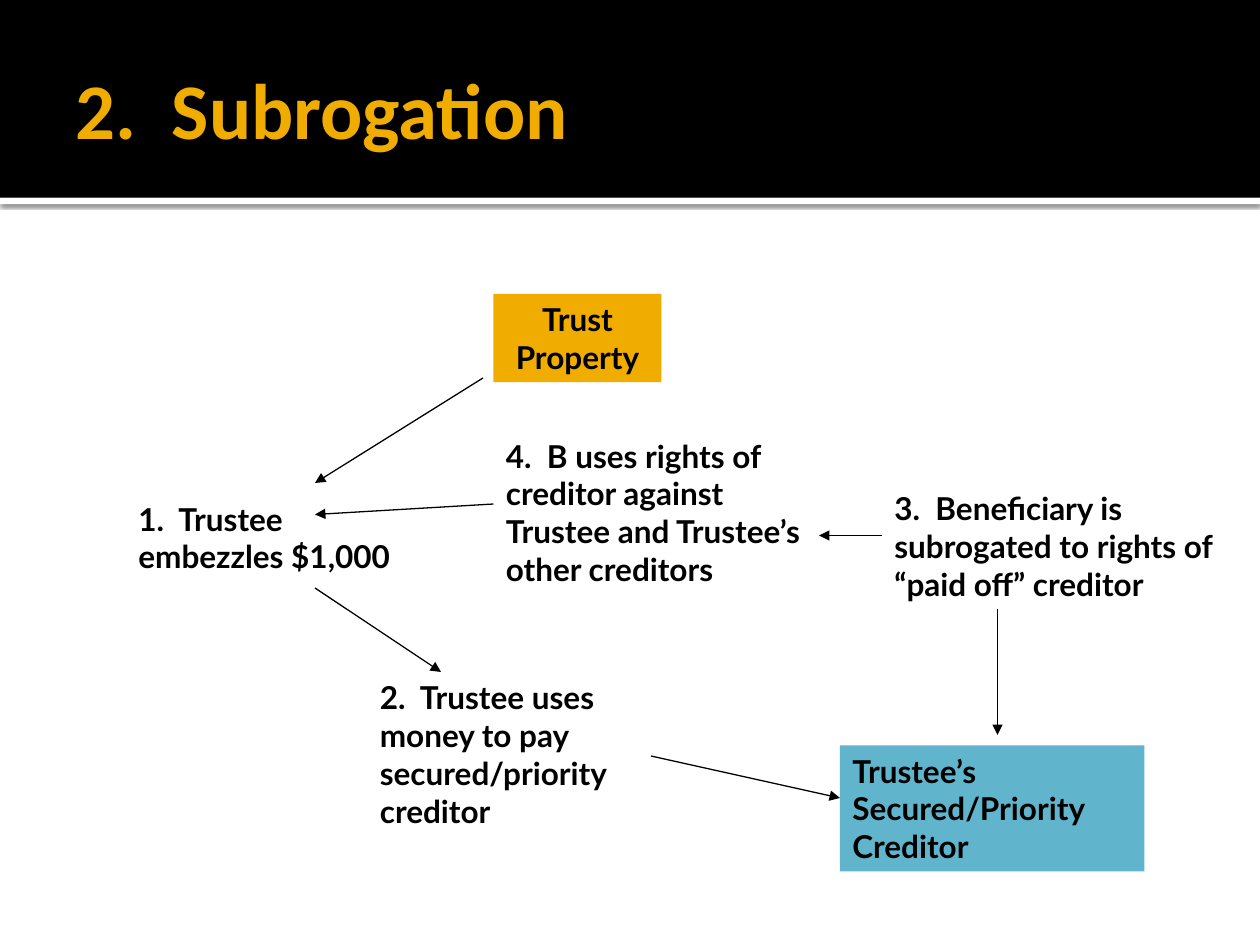
from pptx import Presentation
from pptx.dml.color import RGBColor
from pptx.enum.shapes import MSO_CONNECTOR, MSO_SHAPE
from pptx.enum.text import MSO_ANCHOR, MSO_AUTO_SIZE, PP_ALIGN
from pptx.oxml import parse_xml
from pptx.oxml.ns import nsdecls
from pptx.util import Inches, Pt

BLACK, WHITE, GOLD, BLUE = "000000", "FFFFFF", "F0AD00", "60B5CC"
TITLE = "2.  Subrogation"

# The diagram sits on a grid of 12 units to the inch
UNIT = Inches(1) / 12

# Text, left, top, width, height, fill, alignment
STEPS = [
    ("Trust Property", 47, 28, 16, 8.4, GOLD, PP_ALIGN.CENTER),
    ("1.  Trustee\vembezzles $1,000", 12, 47, 35, 8.4, None, PP_ALIGN.LEFT),
    ("2.  Trustee uses money to pay secured/priority creditor",
     35, 64, 29, 15.6, None, PP_ALIGN.LEFT),
    ("Trustee’s Secured/Priority Creditor",
     80, 71, 29, 12, BLUE, PP_ALIGN.LEFT),
    ("3.  Beneficiary is subrogated to rights of “paid off” creditor",
     84, 46, 34, 12, None, PP_ALIGN.LEFT),
    ("4.  B uses rights of creditor against Trustee and Trustee’s "
     "other creditors", 47, 41, 32, 19.2, None, PP_ALIGN.LEFT),
]

# Start x, start y, end x, end y
ARROWS = [
    (46, 36, 30, 46),
    (30, 56, 42, 64),
    (62, 72, 80, 76),
    (95, 58, 95, 70),
    (84, 51, 78, 51),
    (47, 48, 30, 49),
]


def color(hex):
    return RGBColor.from_string(hex)


def grid(*units):
    return [round(u * UNIT) for u in units]


def add_rect(place, fill):
    rect = slide.shapes.add_shape(MSO_SHAPE.RECTANGLE, *place)
    rect.shadow.inherit = False
    rect.fill.solid()
    rect.fill.fore_color.rgb = color(fill)
    rect.line.fill.background()
    return rect


def set_text(shape, text, size, face, ink, align, anchor):
    frame = shape.text_frame
    frame.word_wrap = True
    frame.vertical_anchor = anchor
    frame.text = text
    para = frame.paragraphs[0]
    para.alignment = align
    for run in para.runs:
        font = run.font
        font.size, font.name, font.bold = Pt(size), face, True
        font.color.rgb = color(ink)
    return frame


def add_arrow(ends):
    line = slide.shapes.add_connector(MSO_CONNECTOR.STRAIGHT, *grid(*ends))
    line.line.color.rgb = color(BLACK)
    line.line.width = Pt(0.75)
    line.line._get_or_add_ln().append(
        parse_xml(f'<a:tailEnd {nsdecls("a")} type="triangle"/>'))
    line._element.spPr.append(parse_xml(f'<a:effectLst {nsdecls("a")}/>'))


deck = Presentation()
deck.slide_width, deck.slide_height = Inches(10), Inches(7.5)
slide = deck.slides.add_slide(deck.slide_layouts[6])

# Header: white strip with a soft shadow, then the black band
band = Inches(1.57)
strip = add_rect((0, band, deck.slide_width, Inches(0.05)), WHITE)
effects = strip._element.spPr.find(
    "{http://schemas.openxmlformats.org/drawingml/2006/main}effectLst")
effects.append(parse_xml(
    f'<a:outerShdw {nsdecls("a")} blurRad="{Pt(2.5)}" dist="{Pt(0.8)}" '
    f'dir="5400000" rotWithShape="0"><a:srgbClr val="{BLACK}">'
    '<a:alpha val="60000"/></a:srgbClr></a:outerShdw>'))
add_rect((0, 0, deck.slide_width, band), BLACK)

# Title
title = slide.shapes.add_textbox(
    Inches(0.5), Inches(0.17), Inches(9), Inches(1.37))
frame = set_text(title, TITLE, 45, "Calibri", GOLD,
                 PP_ALIGN.LEFT, MSO_ANCHOR.MIDDLE)
frame.margin_right = Inches(0.05)

# Steps and parties
for text, *place, fill, align in STEPS:
    place = grid(*place)
    box = add_rect(place, fill) if fill else slide.shapes.add_textbox(*place)
    frame = set_text(box, text, 18, "Lato", BLACK, align, MSO_ANCHOR.TOP)
    frame.auto_size = MSO_AUTO_SIZE.SHAPE_TO_FIT_TEXT

# Arrows between them
for ends in ARROWS:
    add_arrow(ends)

deck.save("out.pptx")
